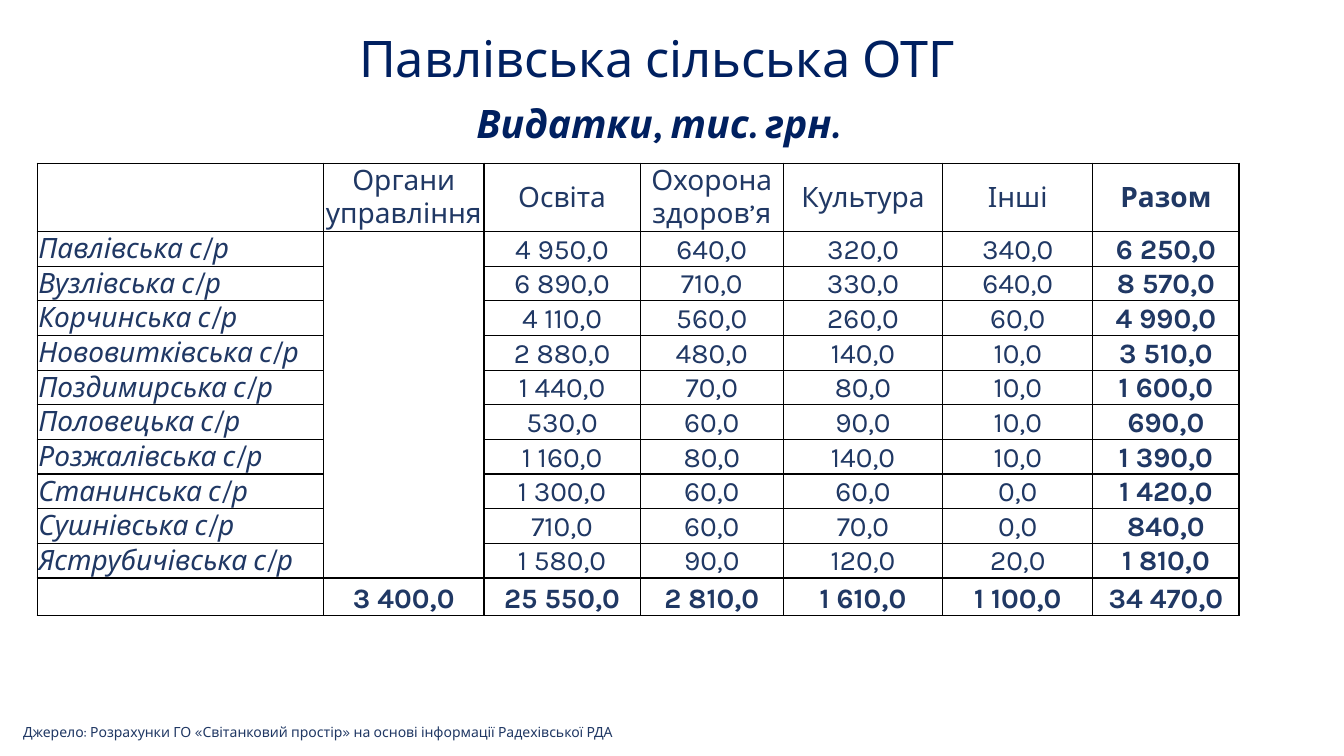
from lxml import etree
from pptx import Presentation
from pptx import util as u
from pptx.dml.color import RGBColor
from pptx.enum import text
from pptx.oxml import ns

FONT = "Karla"
COLORS = {"title": "002060", "body": "203864", "border": "000000"}
COL_WIDTHS = [2.84, 1.59, 1.55, 1.42, 1.58, 1.49, 1.45]
ROW_HEIGHTS = [0.66] + [0.34] * 10 + [0.37]
HEADER = ["", "Органи управління", "Освіта", "Охорона здоров’я", "Культура", "Інші", "Разом"]
COUNCILS = [
    ["Павлівська с/р", "", "4 950,0", "640,0", "320,0", "340,0", "6 250,0"],
    ["Вузлівська с/р", "", "6 890,0", "710,0", "330,0", "640,0", "8 570,0"],
    ["Корчинська с/р", "", "4 110,0", "560,0", "260,0", "60,0", "4 990,0"],
    ["Нововитківська с/р", "", "2 880,0", "480,0", "140,0", "10,0", "3 510,0"],
    ["Поздимирська с/р", "", "1 440,0", "70,0", "80,0", "10,0", "1 600,0"],
    ["Половецька с/р", "", "530,0", "60,0", "90,0", "10,0", "690,0"],
    ["Розжалівська с/р", "", "1 160,0", "80,0", "140,0", "10,0", "1 390,0"],
    ["Станинська с/р", "", "1 300,0", "60,0", "60,0", "0,0", "1 420,0"],
    ["Сушнівська с/р", "", "710,0", "60,0", "70,0", "0,0", "840,0"],
    ["Яструбичівська с/р", "", "1 580,0", "90,0", "120,0", "20,0", "1 810,0"],
]
TOTALS = ["", "3 400,0", "25 550,0", "2 810,0", "1 610,0", "1 100,0", "34 470,0"]


def add_run(p, words, size, color, bold=False, italic=False):
    r = p.add_run()
    r.text = words
    r.font.name = FONT
    r.font.size = u.Pt(size)
    r.font.bold = bold
    r.font.italic = italic
    r.font.color.rgb = RGBColor.from_string(COLORS[color])


def add_title(s, words):
    sp = s.shapes.title
    sp.left, sp.top, sp.width, sp.height = map(u.Inches, (0.37, 0.12, 12.29, 0.98))
    tf = sp.text_frame
    tf.vertical_anchor = text.MSO_ANCHOR.MIDDLE
    p = tf.paragraphs[0]
    p.alignment = text.PP_ALIGN.CENTER
    p.line_spacing = 0.9
    add_run(p, words, 36, "title")


def add_text(s, box):
    tf = s.shapes.add_textbox(*map(u.Inches, box)).text_frame
    tf.word_wrap = True
    return tf.paragraphs[0]


def set_borders(cell):
    tc_pr = cell._tc.get_or_add_tcPr()
    for side in ("a:lnL", "a:lnR", "a:lnT", "a:lnB"):
        ln = etree.SubElement(tc_pr, ns.qn(side), w=str(u.Pt(1)))
        fill = etree.SubElement(ln, ns.qn("a:solidFill"))
        etree.SubElement(fill, ns.qn("a:srgbClr"), val=COLORS["border"])


def fill_cell(cell, words, anchor, align, bold, italic):
    cell.margin_left = cell.margin_right = cell.margin_top = u.Inches(0.01)
    cell.margin_bottom = 0
    cell.vertical_anchor = anchor
    set_borders(cell)
    cell.fill.background()
    if words:
        p = cell.text_frame.paragraphs[0]
        p.alignment = align
        add_run(p, words, 20, "body", bold, italic)


def add_expense_table(s):
    rows = [HEADER, *COUNCILS, TOTALS]
    last_row, last_col = len(rows) - 1, len(HEADER) - 1
    box = (0.37, 1.62, sum(COL_WIDTHS), sum(ROW_HEIGHTS))
    table = s.shapes.add_table(len(rows), len(HEADER), *map(u.Inches, box)).table
    table.first_row = table.horz_banding = False
    for col, width in zip(table.columns, COL_WIDTHS):
        col.width = u.Inches(width)
    for row, height in zip(table.rows, ROW_HEIGHTS):
        row.height = u.Inches(height)
    for i, values in enumerate(rows):
        for j, words in enumerate(values):
            is_name = j == 0
            middle = i == 0 or is_name
            fill_cell(
                table.cell(i, j), words,
                text.MSO_ANCHOR.MIDDLE if middle else text.MSO_ANCHOR.BOTTOM,
                text.PP_ALIGN.LEFT if is_name else text.PP_ALIGN.CENTER,
                bold=i == last_row or j == last_col, italic=is_name,
            )
    table.cell(1, 1).merge(table.cell(last_row - 1, 1))


def main():
    prs = Presentation()
    prs.slide_width, prs.slide_height = u.Inches(13.33), u.Inches(7.5)
    s = prs.slides.add_slide(prs.slide_layouts[5])
    add_title(s, "Павлівська сільська ОТГ")
    p = add_text(s, (1.28, 0.99, 10.49, 0.45))
    p.alignment = text.PP_ALIGN.CENTER
    p.line_spacing = 0.9
    add_run(p, "Видатки, тис. грн.", 28, "title", bold=True, italic=True)
    add_expense_table(s)
    p = add_text(s, (0.13, 7.13, 6.18, 0.27))
    add_run(p, "Джерело: Розрахунки ГО «Світанковий простір» на основі інформації Радехівської РДА", 10, "body")
    prs.save("out.pptx")


if __name__ == "__main__":
    main()
